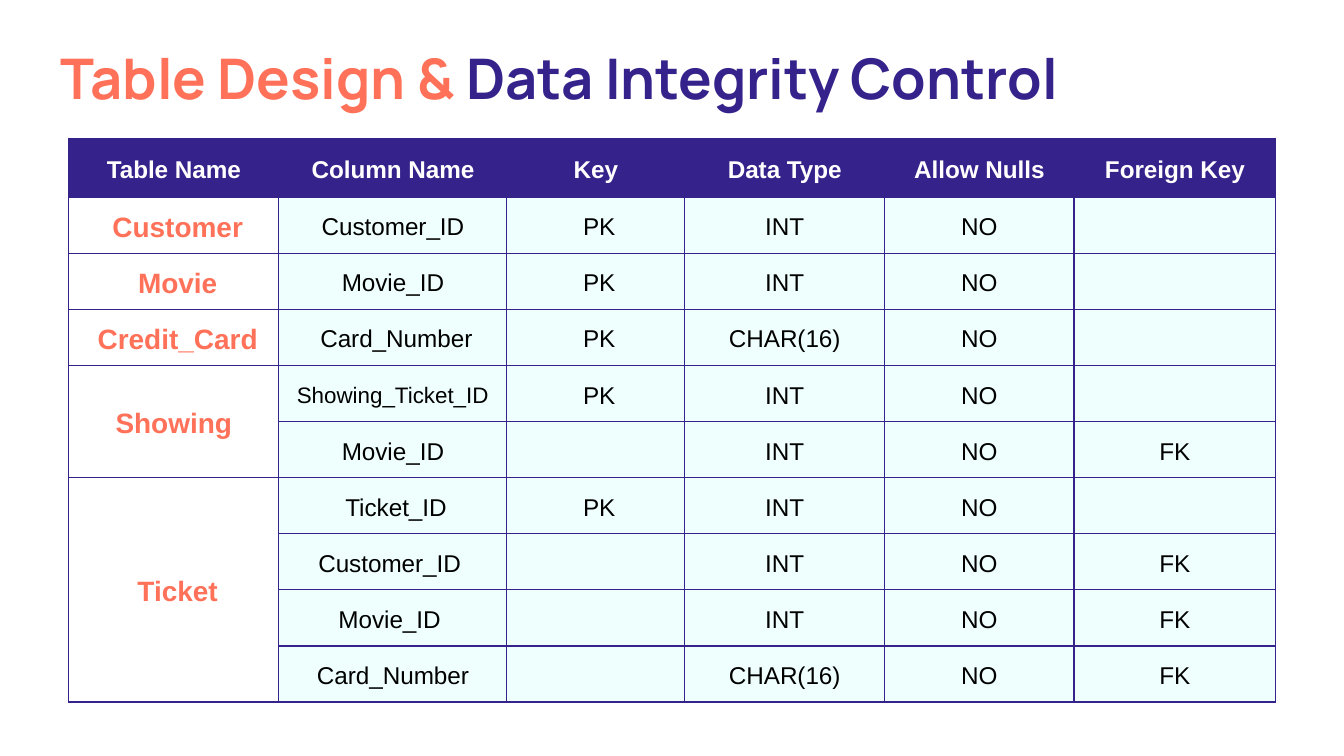
from lxml import etree
from pptx import Presentation
from pptx import util as u
from pptx.dml.color import RGBColor
from pptx.enum import text
from pptx.oxml.ns import qn

C = {"coral": "FF7158", "indigo": "35228B", "mint": "EBFFFE", "white": "FFFFFF", "black": "000000"}


def add_borders(cell):
    tcPr = cell._tc.get_or_add_tcPr()
    for i, side in enumerate(("lnL", "lnR", "lnT", "lnB")):
        ln = etree.Element(qn("a:" + side), w=str(u.Pt(0.75)))
        fill = etree.SubElement(ln, qn("a:solidFill"))
        etree.SubElement(fill, qn("a:srgbClr"), val=C["indigo"])
        tcPr.insert(i, ln)


def fill_cell(cell, color, alpha=None):
    cell.fill.solid()
    cell.fill.fore_color.rgb = RGBColor.from_string(C[color])
    if alpha:
        clr = cell._tc.tcPr.find(".//" + qn("a:srgbClr"))
        etree.SubElement(clr, qn("a:alpha"), val=str(alpha * 1000))


prs = Presentation()
prs.slide_width, prs.slide_height = u.Cm(25.4), u.Cm(14.29)
s = prs.slides.add_slide(prs.slide_layouts[5])

title = s.shapes.title
title.left, title.top, title.width, title.height = u.Cm(0.89), u.Cm(0.58), u.Cm(21.41), u.Cm(1.6)
tf = title.text_frame
tf.auto_size = text.MSO_AUTO_SIZE.NONE
tf.vertical_anchor = text.MSO_ANCHOR.TOP
tf.margin_left = tf.margin_right = tf.margin_top = tf.margin_bottom = u.Cm(0.25)
p = tf.paragraphs[0]
p.alignment = text.PP_ALIGN.LEFT
for words, color in (("Table Design & ", "coral"), ("Data Integrity Control", "indigo")):
    r = p.add_run()
    r.text = words
    r.font.name, r.font.size, r.font.bold = "Manrope", u.Pt(30), True
    r.font.color.rgb = RGBColor.from_string(C[color])

rows = [
    ("Table Name", "Column Name", "Key", "Data Type", "Allow Nulls", "Foreign Key"),
    (" Customer", "Customer_ID", " PK", "INT", "NO", ""),
    (" Movie", "Movie_ID", " PK", "INT", "NO", ""),
    (" Credit_Card", " Card_Number", " PK", "CHAR(16)", "NO", ""),
    ("Showing", "Showing_Ticket_ID", " PK", "INT", "NO", ""),
    ("", "Movie_ID", "", "INT", "NO", "FK"),
    (" Ticket", " Ticket_ID", " PK", "INT", "NO", ""),
    ("", "Customer_ID ", "", "INT", "NO", "FK"),
    ("", "Movie_ID ", "", "INT", "NO", "FK"),
    ("", "Card_Number", "", "CHAR(16)", "NO", "FK"),
]
widths = [3.97, 4.31, 3.36, 3.78, 3.58, 3.81]
heights = [1.11] + [1.06] * (len(rows) - 1)

table = s.shapes.add_table(len(rows), len(widths), u.Cm(1.3), u.Cm(2.62),
                           u.Cm(sum(widths)), u.Cm(sum(heights))).table
table.horz_banding = False
table.first_row = False
for col, width in zip(table.columns, widths):
    col.width = u.Cm(width)
for row, height in zip(table.rows, heights):
    row.height = u.Cm(height)

for i, row in enumerate(rows):
    for j, words in enumerate(row):
        cell = table.cell(i, j)
        cell.text = words
        cell.vertical_anchor = text.MSO_ANCHOR.MIDDLE
        if i == 0:
            size, color, bold = 13, "white", True
            fill_cell(cell, "indigo")
        elif j == 0:
            size, color, bold = 15, "coral", True
            cell.fill.background()
        else:
            size, color, bold = 12 if words == "Showing_Ticket_ID" else 13, "black", False
            fill_cell(cell, "mint", 83)
        add_borders(cell)
        p = cell.text_frame.paragraphs[0]
        p.alignment = text.PP_ALIGN.CENTER
        p.line_spacing = 1.15
        p.font.name, p.font.size, p.font.bold = "Arial", u.Pt(size), bold
        p.font.color.rgb = RGBColor.from_string(C[color])

for first, last in ((4, 5), (6, 9)):
    table.cell(first, 0).merge(table.cell(last, 0))

prs.save("out.pptx")
